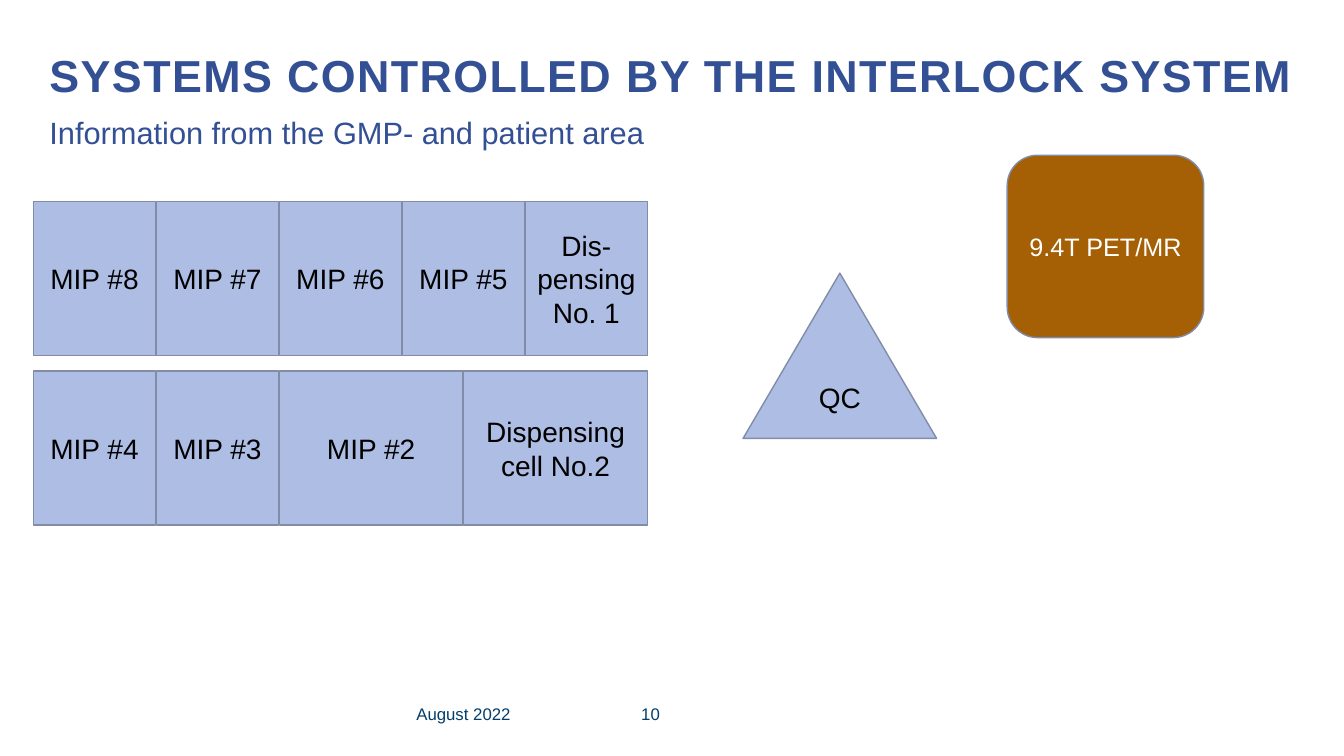
from itertools import accumulate

from lxml import etree
from pptx import Presentation
from pptx import util as u
from pptx.dml.color import RGBColor
from pptx.enum import shapes, text
from pptx.oxml.ns import qn

NAVY, BLUE, GREY, BROWN = "335095", "ADBDE3", "808CA8", "A55F05"
BLACK, WHITE, FOOTER_INK = "000000", "FFFFFF", "023D6B"
CELL_LEFT, CELL_TOP = 2.48, 26.67
COLUMN, ROW, CELL_HEIGHT = 9.15, 22.4, 20.4


def colour(target, value):
    target.rgb = RGBColor.from_string(value)


class Sheet:
    """Draws styled elements on one slide, placed in percent of its size."""

    font = "Arial"

    def __init__(self, deck):
        self.width, self.height = deck.slide_width, deck.slide_height
        self.slide = deck.slides.add_slide(deck.slide_layouts[1])

    def box(self, left, top, width, height):
        return [int(share * side / 100) for share, side in
                zip((left, top, width, height), (self.width, self.height) * 2)]

    def fill_text(self, frame, lines, size, ink, align, anchor, bold=False):
        frame.word_wrap = True
        frame.auto_size = text.MSO_AUTO_SIZE.NONE
        frame.vertical_anchor = anchor
        for number, line in enumerate(lines):
            paragraph = frame.add_paragraph() if number else frame.paragraphs[0]
            paragraph.alignment = align
            run = paragraph.add_run()
            run.text = line
            run.font.name, run.font.size, run.font.bold = self.font, u.Pt(size), bold
            colour(run.font.color, ink)

    def heading(self, index, line, place, size, bold=False, after=0, tracking=0):
        holder = self.slide.placeholders[index]
        holder.left, holder.top, holder.width, holder.height = self.box(*place)
        paragraph = holder.text_frame.paragraphs[0]
        properties = paragraph._p.get_or_add_pPr()
        properties.set("marL", "0")
        properties.set("indent", "0")
        etree.SubElement(properties, qn("a:buNone"))
        paragraph.line_spacing = 1.14
        paragraph.space_before, paragraph.space_after = u.Pt(0), u.Pt(after)
        self.fill_text(holder.text_frame, [line], size, NAVY,
                       text.PP_ALIGN.LEFT, text.MSO_ANCHOR.TOP, bold)
        paragraph.runs[0]._r.get_or_add_rPr().set("spc", str(tracking * 100))

    def block(self, kind, lines, place, fill=BLUE, ink=BLACK, size=20):
        block = self.slide.shapes.add_shape(kind, *self.box(*place))
        block.shadow.inherit = False
        block.fill.solid()
        colour(block.fill.fore_color, fill)
        colour(block.line.color, GREY)
        block.line.width = u.Pt(1)
        self.fill_text(block.text_frame, lines, size, ink,
                       text.PP_ALIGN.CENTER, text.MSO_ANCHOR.MIDDLE)

    def cell(self, row, column, span, lines):
        self.block(shapes.MSO_SHAPE.RECTANGLE, lines,
                   (CELL_LEFT + column * COLUMN, CELL_TOP + row * ROW,
                    span * COLUMN - 0.05, CELL_HEIGHT))

    def footer(self, line, left, width):
        frame = self.slide.shapes.add_textbox(
            *self.box(left, 93.07, width, 3.2)).text_frame
        frame.margin_left = frame.margin_right = 0
        frame.margin_top = frame.margin_bottom = 0
        self.fill_text(frame, [line], 12, FOOTER_INK,
                       text.PP_ALIGN.LEFT, text.MSO_ANCHOR.TOP)


def main():
    deck = Presentation()
    deck.slide_width, deck.slide_height = u.Inches(13.33), u.Inches(7.5)
    sheet = Sheet(deck)
    sheet.heading(0, "SYSTEMS CONTROLLED BY THE INTERLOCK SYSTEM",
                  (2.93, 4.67, 94.9, 16.4), 32, bold=True, tracking=1)
    sheet.heading(1, "Information from the GMP- and patient area",
                  (2.93, 13.73, 93.92, 7.47), 22, after=6)

    hot_cells = [
        [(1, ["MIP #8"]), (1, ["MIP #7"]), (1, ["MIP #6"]), (1, ["MIP #5"]),
         (1, ["Dis-", "pensing No. 1"])],
        [(1, ["MIP #4"]), (1, ["MIP #3"]), (1.5, ["MIP #2"]),
         (1.5, ["Dispensing", "cell No.2"])],
    ]
    for row, cells in enumerate(hot_cells):
        columns = accumulate((span for span, _ in cells), initial=0)
        for column, (span, lines) in zip(columns, cells):
            sheet.cell(row, column, span, lines)

    sheet.block(shapes.MSO_SHAPE.ISOSCELES_TRIANGLE, ["QC"],
                (55.29, 36.13, 14.4, 21.87))
    sheet.block(shapes.MSO_SHAPE.ROUNDED_RECTANGLE, ["9.4T PET/MR"],
                (74.94, 20.53, 14.63, 24.13), BROWN, WHITE, 18)
    sheet.footer("August 2022", 30.98, 13.13)
    sheet.footer("10", 47.71, 5.93)
    deck.save("out.pptx")


if __name__ == "__main__":
    main()
